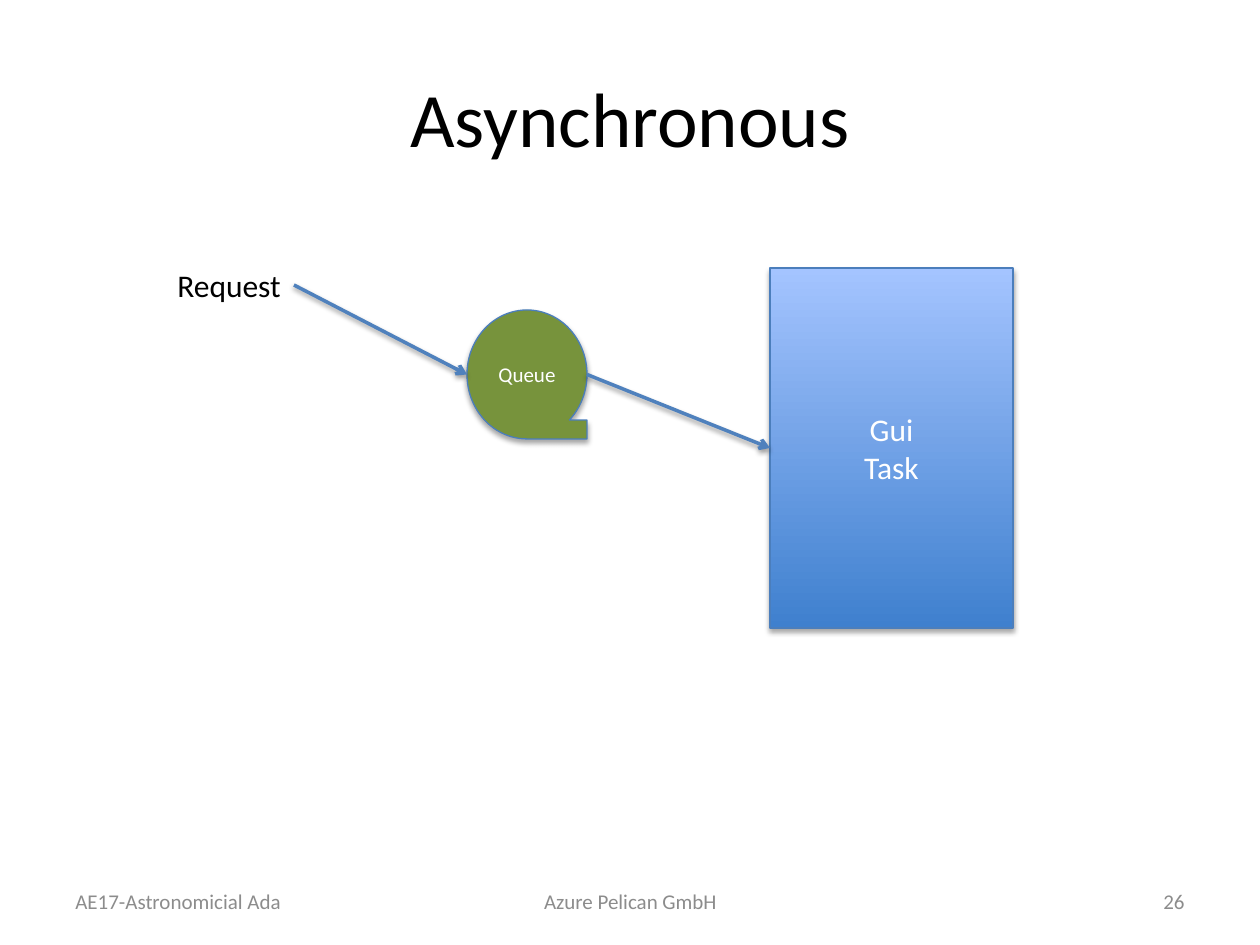
from dataclasses import dataclass

import pptx
import pptx.dml.color
import pptx.enum.shapes
import pptx.enum.text
import pptx.oxml
import pptx.oxml.ns
import pptx.util

Align = pptx.enum.text.PP_ALIGN
Anchor = pptx.enum.text.MSO_ANCHOR
ShapeKind = pptx.enum.shapes.MSO_SHAPE
PX_PER_INCH = 126
TOP, LEFT, BOTTOM, RIGHT = range(4)


@dataclass(frozen=True)
class Theme:
    font: str = "Calibri"
    black: str = "000000"
    white: str = "FFFFFF"
    grey: str = "8C8C8C"
    outline: str = "4B7EBC"
    arrow: str = "4F81BD"
    queue: str = "77933C"
    task: tuple[str, str] = ("3F80CE", "A4C4FF")
    title_size: int = 44
    body_size: int = 18
    small_size: int = 12


@dataclass(frozen=True)
class Box:
    left: int
    top: int
    width: int
    height: int

    def emu(self) -> list[int]:
        return [px(n) for n in (self.left, self.top, self.width, self.height)]


@dataclass(frozen=True)
class Label:
    text: str
    box: Box
    size: int
    color: str
    align: Align = Align.LEFT
    anchor: Anchor = Anchor.MIDDLE


@dataclass(frozen=True)
class Node:
    kind: ShapeKind
    label: Label
    fill: tuple[str, ...]


THEME = Theme()
TITLE = Label("Asynchronous", Box(63, 38, 1134, 158),
              THEME.title_size, THEME.black, Align.CENTER)
FOOTERS = [
    Label(text, Box(left, 876, width, 50), THEME.small_size, THEME.grey, align)
    for text, left, width, align in (
        ("AE17-Astronomicial Ada", 63, 294, Align.LEFT),
        ("Azure Pelican GmbH", 431, 399, Align.CENTER),
        ("26", 903, 294, Align.RIGHT),
    )
]
REQUEST = Label("Request", Box(165, 260, 129, 50),
                THEME.body_size, THEME.black, anchor=Anchor.TOP)
TASK = Node(ShapeKind.RECTANGLE,
            Label("Gui\nTask", Box(770, 268, 243, 360),
                  THEME.body_size, THEME.white, Align.CENTER),
            THEME.task)
QUEUE = Node(ShapeKind.FLOWCHART_SEQUENTIAL_ACCESS_STORAGE,
             Label("Queue", Box(467, 310, 120, 129),
                   THEME.small_size, THEME.white, Align.CENTER),
             (THEME.queue,))


def px(length: int) -> int:
    return round(length * pptx.util.Inches(1) / PX_PER_INCH)


def rgb(color: str) -> pptx.dml.color.RGBColor:
    return pptx.dml.color.RGBColor.from_string(color)


def write_text(shape, label: Label) -> None:
    frame = shape.text_frame
    frame.text = label.text
    frame.word_wrap = True
    frame.vertical_anchor = label.anchor
    for paragraph in frame.paragraphs:
        paragraph.alignment = label.align
        paragraph.font.name = THEME.font
        paragraph.font.size = pptx.util.Pt(label.size)
        paragraph.font.color.rgb = rgb(label.color)


def add_label(slide, label: Label):
    shape = slide.shapes.add_textbox(*label.box.emu())
    write_text(shape, label)
    return shape


def add_shadow(shape, opacity: int, distance: float) -> None:
    shape._element.spPr.append(pptx.oxml.parse_xml(
        f'<a:effectLst {pptx.oxml.ns.nsdecls("a")}>'
        f'<a:outerShdw blurRad="{pptx.util.Pt(3.1)}" '
        f'dist="{pptx.util.Pt(distance)}" dir="5400000" rotWithShape="0">'
        f'<a:srgbClr val="{THEME.black}"><a:alpha val="{opacity * 1000}"/>'
        '</a:srgbClr></a:outerShdw></a:effectLst>'))


def add_node(slide, node: Node):
    shape = slide.shapes.add_shape(node.kind, *node.label.box.emu())
    if len(node.fill) == 1:
        shape.fill.solid()
        shape.fill.fore_color.rgb = rgb(node.fill[0])
    else:
        shape.fill.gradient()
        shape.fill.gradient_angle = 90
        for stop, color in zip(shape.fill.gradient_stops, node.fill):
            stop.color.rgb = rgb(color)
    shape.line.color.rgb = rgb(THEME.outline)
    shape.line.width = pptx.util.Pt(0.75)
    add_shadow(shape, 35, 1.8)
    write_text(shape, node.label)
    return shape


def add_arrow(slide, source, target) -> None:
    arrow = slide.shapes.add_connector(
        pptx.enum.shapes.MSO_CONNECTOR.STRAIGHT, 0, 0, 0, 0)
    arrow.begin_connect(source, RIGHT)
    arrow.end_connect(target, LEFT)
    arrow.line.color.rgb = rgb(THEME.arrow)
    arrow.line.width = pptx.util.Pt(2)
    arrow.line._get_or_add_ln().append(pptx.oxml.parse_xml(
        f'<a:tailEnd {pptx.oxml.ns.nsdecls("a")} type="arrow"/>'))
    add_shadow(arrow, 38, 1.6)


def main() -> None:
    presentation = pptx.Presentation()
    presentation.slide_width = pptx.util.Inches(10)
    presentation.slide_height = pptx.util.Inches(7.5)
    slide = presentation.slides.add_slide(
        presentation.slide_layouts.get_by_name("Title Only"))

    title = slide.shapes.title
    title.left, title.top, title.width, title.height = TITLE.box.emu()
    write_text(title, TITLE)
    for footer in FOOTERS:
        add_label(slide, footer)

    task = add_node(slide, TASK)
    request = add_label(slide, REQUEST)
    queue = add_node(slide, QUEUE)
    add_arrow(slide, request, queue)
    add_arrow(slide, queue, task)

    presentation.save("out.pptx")


if __name__ == "__main__":
    main()
